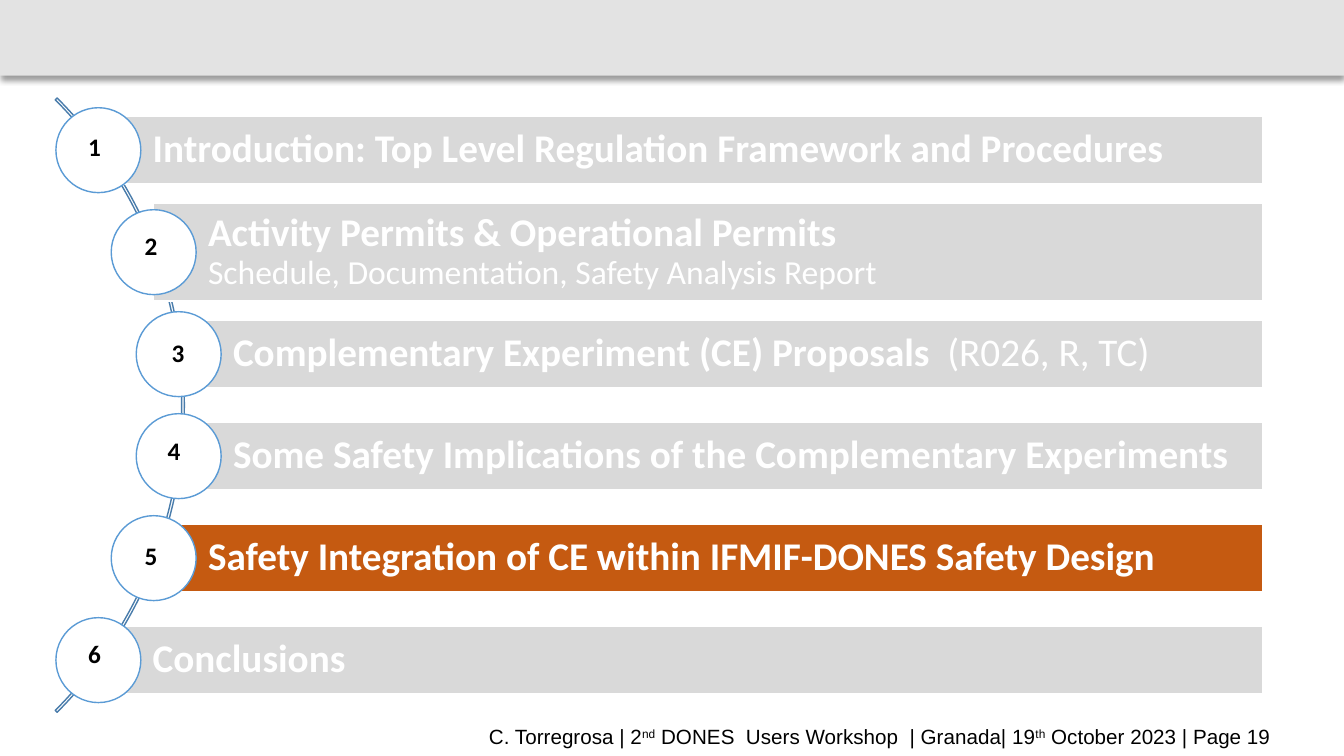
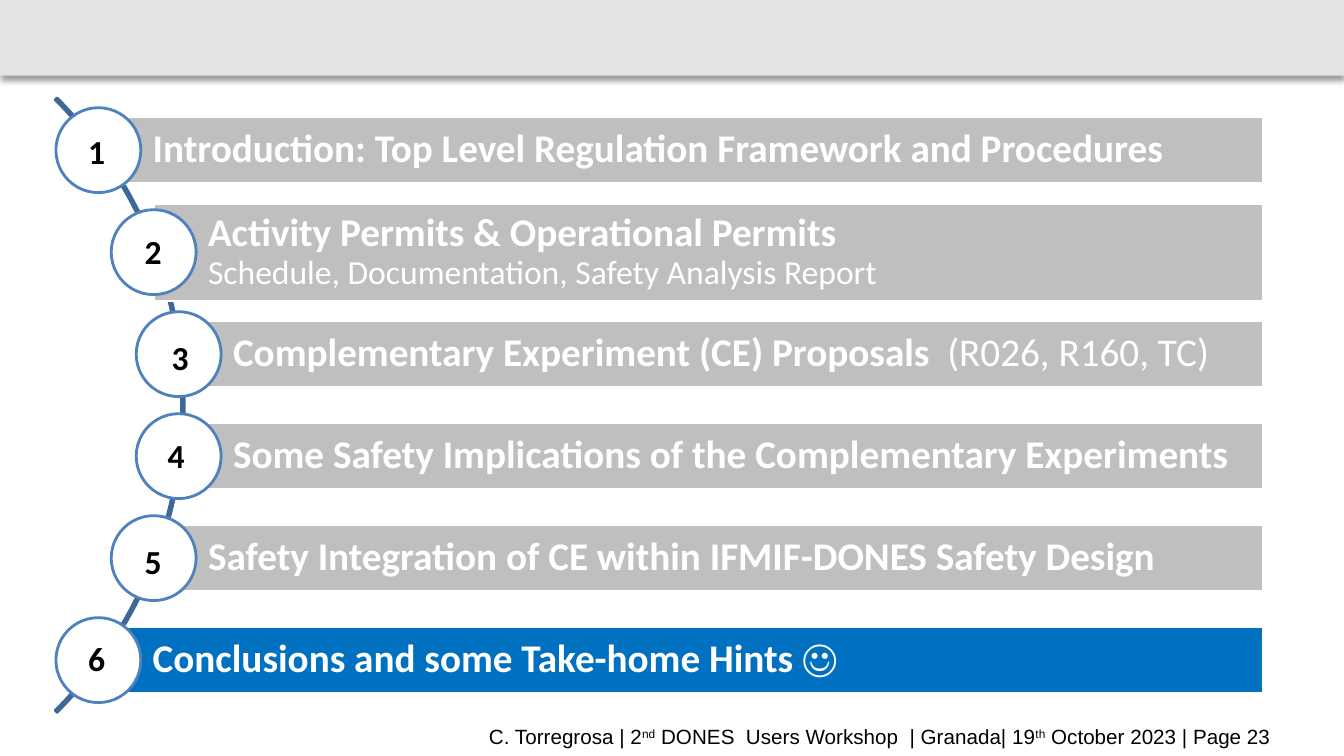
from math import sqrt

from lxml.etree import SubElement
from pptx import Presentation
from pptx.dml.color import RGBColor
from pptx.enum.shapes import MSO_SHAPE
from pptx.enum.text import MSO_ANCHOR, PP_ALIGN
from pptx.oxml.ns import qn
from pptx.util import Cm, Pt

# Colours
WHITE = RGBColor(0xFF, 0xFF, 0xFF)
BLACK = RGBColor(0x00, 0x00, 0x00)
BAND_GREY = RGBColor(0xE3, 0xE3, 0xE3)
LIGHT_GREY = RGBColor(0xD9, 0xD9, 0xD9)
MID_GREY = RGBColor(0xBF, 0xBF, 0xBF)
ORANGE = RGBColor(0xC5, 0x5A, 0x11)
BLUE = RGBColor(0x00, 0x70, 0xC0)
PALE_RING = RGBColor(0x5B, 0x9B, 0xD5)
PALE_ARC = RGBColor(0x49, 0x7C, 0xAB)
DARK_RING = RGBColor(0x4F, 0x81, 0xBD)
DARK_ARC = RGBColor(0x3F, 0x67, 0x97)

# Geometry in centimetres
SLIDE_WIDTH, SLIDE_HEIGHT = 33.87, 19.05
ARC_X, ARC_Y, ARC_SIZE = -6.3, 10.21, 21.89
CIRCLE_TRACK = 10.88
CIRCLE_SIZE = 2.14
ROW_PITCH = 2.57
BAR_RIGHT = 31.83
BAR_HEIGHT, TALL_BAR_HEIGHT = 1.7, 2.46

# Top left corner of each number, measured from the centre of its circle
NUMBER_OFFSETS = [(-0.51, -0.61), (-0.48, -0.67), (-0.43, -0.56),
                  (-0.53, -0.66), (-0.48, -0.57), (-0.51, -0.68)]


class AgendaDeck:
    def __init__(self):
        self.presentation = Presentation()
        self.presentation.slide_width = Cm(SLIDE_WIDTH)
        self.presentation.slide_height = Cm(SLIDE_HEIGHT)
        self.slide = None

    def new_slide(self, line_width, ring_color, arc_color, number_size):
        layout = self.presentation.slide_layouts[6]
        self.slide = self.presentation.slides.add_slide(layout)
        self.line_width = line_width
        self.ring_color = ring_color
        self.arc_color = arc_color
        self.number_size = number_size

    def shape(self, kind, left, top, width, height, fill=None, line=None):
        shape = self.slide.shapes.add_shape(
            kind, Cm(left), Cm(top), Cm(width), Cm(height))
        shape.shadow.inherit = False
        if fill is None:
            shape.fill.background()
        else:
            shape.fill.solid()
            shape.fill.fore_color.rgb = fill
        if line is None:
            shape.line.fill.background()
        else:
            shape.line.color.rgb = line
            shape.line.width = Pt(self.line_width)
        return shape

    def text_box(self, left, top, width, height):
        text_frame = self.slide.shapes.add_textbox(
            Cm(left), Cm(top), Cm(width), Cm(height)).text_frame
        text_frame.word_wrap = True
        return text_frame

    def style(self, run, size, color, name="Calibri", bold=False):
        run.font.name = name
        run.font.size = Pt(size)
        run.font.bold = bold
        run.font.color.rgb = color

    def header_band(self):
        band = self.shape(MSO_SHAPE.RECTANGLE, 0, 0, SLIDE_WIDTH, 1.91, BAND_GREY)
        effects = band._element.spPr.find(qn("a:effectLst"))
        shadow = SubElement(effects, qn("a:outerShdw"), blurRad=str(Pt(4)),
                            dist=str(Pt(3)), dir="5400000", algn="t", rotWithShape="0")
        color = SubElement(shadow, qn("a:srgbClr"), val=str(BLACK))
        SubElement(color, qn("a:alpha"), val="40000")

    def arc(self):
        radius = ARC_SIZE / 2
        arc = self.shape(MSO_SHAPE.BLOCK_ARC, ARC_X - radius, ARC_Y - radius,
                         ARC_SIZE, ARC_SIZE, line=self.arc_color)
        for index, value in enumerate((189, 27, 0.003)):
            arc.adjustments[index] = value

    def bar(self, x, y, title, detail, detail_size, fill):
        tall = title.endswith("\n")
        height = TALL_BAR_HEIGHT if tall else BAR_HEIGHT
        bar = self.shape(MSO_SHAPE.RECTANGLE, x, y - height / 2,
                         BAR_RIGHT - x, height, fill, WHITE)
        text_frame = bar.text_frame
        text_frame.margin_left = Cm(1.37)
        text_frame.margin_right = text_frame.margin_top = text_frame.margin_bottom = Cm(0.2)
        text_frame.vertical_anchor = MSO_ANCHOR.MIDDLE
        text_frame.text = title.rstrip("\n")
        paragraph = text_frame.paragraphs[0]
        paragraph.alignment = PP_ALIGN.LEFT
        paragraph.line_spacing = 0.9
        self.style(paragraph.runs[0], 28, WHITE, bold=True)
        if tall:
            paragraph.add_line_break()
        if detail:
            run = paragraph.add_run()
            run.text = detail
            self.style(run, detail_size, WHITE)

    def circle(self, x, y):
        self.shape(MSO_SHAPE.OVAL, x - CIRCLE_SIZE / 2, y - CIRCLE_SIZE / 2,
                   CIRCLE_SIZE, CIRCLE_SIZE, WHITE, self.ring_color)

    def number(self, x, y, number):
        text_frame = self.text_box(x, y, 0.99, 1.27)
        text_frame.text = str(number)
        self.style(text_frame.paragraphs[0].runs[0], self.number_size, BLACK, bold=True)

    def agenda(self, rows, active, active_color, idle_color):
        self.arc()
        for index, (title, detail, detail_size) in enumerate(rows):
            rise = (index - (len(rows) - 1) / 2) * ROW_PITCH
            x = ARC_X + sqrt(CIRCLE_TRACK ** 2 - rise ** 2)
            y = ARC_Y + rise
            fill = active_color if index + 1 == active else idle_color
            self.bar(x, y, title, detail, detail_size, fill)
            self.circle(x, y)
            shift_x, shift_y = NUMBER_OFFSETS[index]
            self.number(x + shift_x, y + shift_y, index + 1)

    def footer(self, page):
        text_frame = self.text_box(1.73, 18.19, 30.53, 0.74)
        text_frame.vertical_anchor = MSO_ANCHOR.MIDDLE
        paragraph = text_frame.paragraphs[0]
        paragraph.alignment = PP_ALIGN.RIGHT
        for text in ("C. Torregrosa | 2", "nd", " DONES  Users Workshop  | Granada| 19",
                     "th", f" October 2023 | Page {page}"):
            run = paragraph.add_run()
            run.text = text
            self.style(run, 14.7, BLACK, name="Arial")
            if text in ("nd", "th"):
                run.font._element.set("baseline", "30000")


def agenda_rows(proposals, conclusions):
    """Title, lighter detail and detail size; a final line feed puts the detail below."""
    return [
        ("Introduction: Top Level Regulation Framework and Procedures", "", 28),
        ("Activity Permits & Operational Permits\n",
         "Schedule, Documentation, Safety Analysis Report", 24),
        ("Complementary Experiment (CE) Proposals  ", proposals, 28),
        ("Some Safety Implications of the Complementary Experiments", "", 28),
        ("Safety Integration of CE within IFMIF-DONES Safety Design", "", 28),
        (conclusions, "", 28),
    ]


def main():
    deck = AgendaDeck()

    # Agenda at part 5
    deck.new_slide(1, PALE_RING, PALE_ARC, 18)
    deck.header_band()
    deck.agenda(agenda_rows("(R026, R, TC)", "Conclusions"), 5, ORANGE, LIGHT_GREY)
    deck.footer(19)

    # Agenda at part 6
    deck.new_slide(2, DARK_RING, DARK_ARC, 24)
    deck.header_band()
    deck.agenda(agenda_rows("(R026, R160, TC)", "Conclusions and some Take-home Hints ☺"),
                6, BLUE, MID_GREY)
    deck.footer(23)

    deck.presentation.save("out.pptx")


if __name__ == "__main__":
    main()
